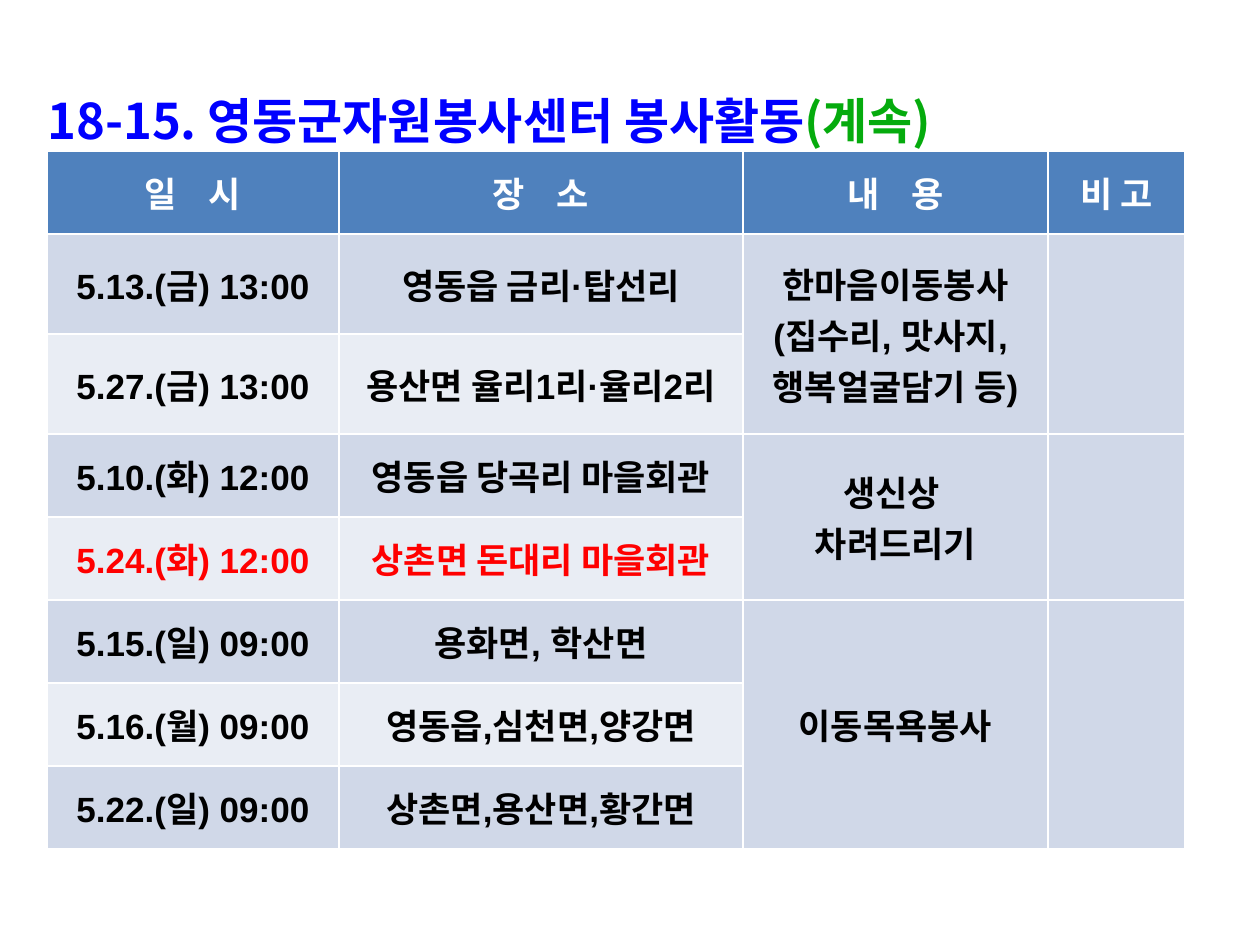
import dataclasses
import pptx
import pptx.dml.color
import pptx.enum.text
import pptx.util

PX = 914400 / 126


@dataclasses.dataclass(frozen=True)
class Theme:
    title: str = "0000FF"
    note: str = "05AB0D"
    header: str = "4F81BD"
    band: tuple = ("D0D8E8", "E9EDF4")
    text: str = "000000"
    alert: str = "FF0000"
    white: str = "FFFFFF"
    title_font: str = "Noto Sans CJK KR"
    body_font: str = "Arial"
    title_size: int = 28
    body_size: int = 20


THEME = Theme()
HEADERS = ["일    시", "장    소", "내    용", "비 고"]
GROUPS = [
    ("한마음이동봉사\n(집수리, 맛사지, \n행복얼굴담기 등)",
     [("5.13.(금) 13:00", "영동읍 금리·탑선리"),
      ("5.27.(금) 13:00", "용산면 율리1리·율리2리")]),
    ("생신상 \n차려드리기",
     [("5.10.(화) 12:00", "영동읍 당곡리 마을회관"),
      ("5.24.(화) 12:00", "상촌면 돈대리 마을회관")]),
    ("이동목욕봉사",
     [("5.15.(일) 09:00", "용화면, 학산면"),
      ("5.16.(월) 09:00", "영동읍,심천면,양강면"),
      ("5.22.(일) 09:00", "상촌면,용산면,황간면")]),
]
ALERT_DATE = "5.24.(화) 12:00"
COL_WIDTHS = [292, 404, 305, 137]
ROW_HEIGHTS = [83, 100, 100] + [83] * 5


def px(n):
    return pptx.util.Emu(round(n * PX))


def rgb(color):
    return pptx.dml.color.RGBColor.from_string(color)


def set_font(font, name, size, color):
    font.name = name
    font.size = pptx.util.Pt(size)
    font.bold = True
    font.color.rgb = rgb(color)


def add_title(slide, x, y, w, h):
    tf = slide.shapes.add_textbox(px(x), px(y), px(w), px(h)).text_frame
    tf.word_wrap = True
    p = tf.paragraphs[0]
    p.line_spacing = 1.5
    for text, color in [("18-15. 영동군자원봉사센터 봉사활동", THEME.title),
                        ("(계속)", THEME.note)]:
        r = p.add_run()
        r.text = text
        set_font(r.font, THEME.title_font, THEME.title_size, color)


def fill_cell(cell, text, fill, color):
    cell.fill.solid()
    cell.fill.fore_color.rgb = rgb(fill)
    cell.vertical_anchor = pptx.enum.text.MSO_ANCHOR.MIDDLE
    cell.text = text
    for p in cell.text_frame.paragraphs:
        p.alignment = pptx.enum.text.PP_ALIGN.CENTER
        set_font(p.font, THEME.body_font, THEME.body_size, color)


def add_schedule(slide, x, y, w, h):
    table = slide.shapes.add_table(
        len(ROW_HEIGHTS), len(COL_WIDTHS), px(x), px(y), px(w), px(h)).table
    for col, width in zip(table.columns, COL_WIDTHS):
        col.width = px(width)
    for row, height in zip(table.rows, ROW_HEIGHTS):
        row.height = px(height)
    for c, text in enumerate(HEADERS):
        fill_cell(table.cell(0, c), text, THEME.header, THEME.white)

    top = 1
    for activity, visits in GROUPS:
        last = top + len(visits) - 1
        for c, text in [(2, activity), (3, "")]:
            table.cell(top, c).merge(table.cell(last, c))
            fill_cell(table.cell(top, c), text, THEME.band[0], THEME.text)
        for i, visit in enumerate(visits, top):
            color = THEME.alert if visit[0] == ALERT_DATE else THEME.text
            for c, text in enumerate(visit):
                fill_cell(table.cell(i, c), text, THEME.band[(i - 1) % 2], color)
        top = last + 1


def main():
    prs = pptx.Presentation()
    prs.slide_width, prs.slide_height = px(1260), px(945)
    slide = prs.slides.add_slide(prs.slide_layouts[6])
    add_title(slide, 35, 55, 1182, 410)
    add_schedule(slide, 47, 151, sum(COL_WIDTHS), sum(ROW_HEIGHTS))
    prs.save("out.pptx")


if __name__ == "__main__":
    main()
